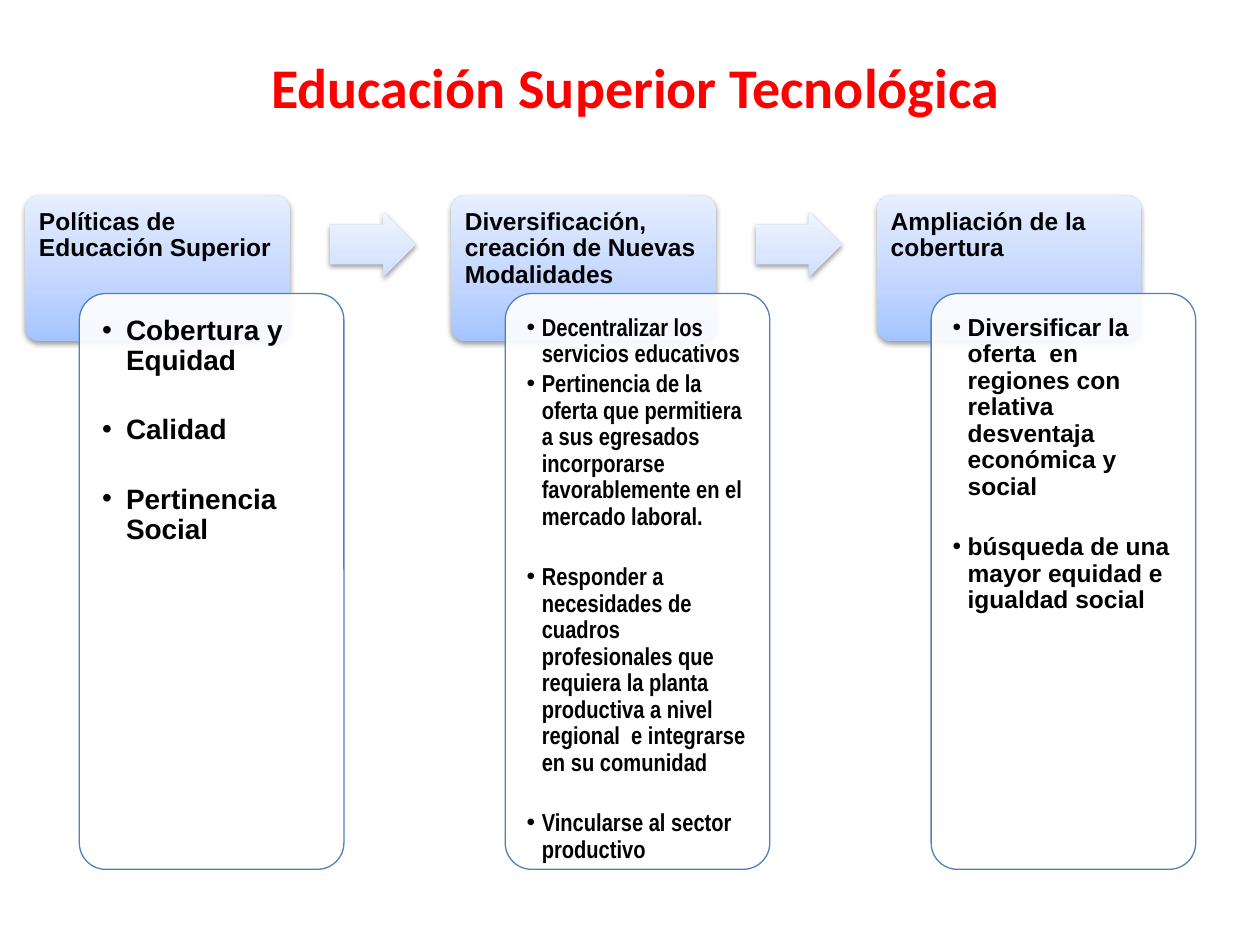
from dataclasses import dataclass

from lxml import etree
from pptx import Presentation
from pptx.dml.color import RGBColor
from pptx.enum import shapes, text
from pptx.oxml import ns
from pptx.util import Inches, Pt

RED = RGBColor(0xFF, 0x00, 0x00)
BLACK = RGBColor(0x00, 0x00, 0x00)
WHITE = RGBColor(0xFF, 0xFF, 0xFF)
BORDER = RGBColor(0x4F, 0x81, 0xBD)
HEADER_STOPS = (
    (0, RGBColor(0xA4, 0xC4, 0xFF)),
    (35, RGBColor(0xBF, 0xD4, 0xFF)),
    (100, RGBColor(0xE6, 0xEE, 0xFF)),
)
ARROW_STOPS = (
    (0, RGBColor(0xCD, 0xDD, 0xFE)),
    (35, RGBColor(0xDB, 0xE6, 0xFE)),
    (100, RGBColor(0xF0, 0xF5, 0xFF)),
)

FIRST_LEFT = 0.2
PITCH = 3.38
CARD_WIDTH = 2.1


@dataclass
class Item:
    wording: str
    space_before: float = 0


@dataclass
class Column:
    heading: str
    items: list[Item]
    font: str = "Arial"
    size: int = 14
    indent: float = 0.12
    inset: float = 0.11


COLUMNS = [
    Column(
        "Políticas de Educación Superior",
        [Item("Cobertura y Equidad"), Item("Calidad", 19.9), Item("Pertinencia Social", 19.9)],
        size=16,
        indent=0.19,
        inset=0.12,
    ),
    Column(
        "Diversificación, creación de Nuevas Modalidades",
        [
            Item("Decentralizar los servicios educativos"),
            Item(
                "Pertinencia de la oferta que permitiera a sus egresados incorporarse "
                "favorablemente en el mercado laboral."
            ),
            Item(
                "Responder a necesidades de cuadros  profesionales que requiera la planta "
                "productiva a nivel regional  e integrarse en su comunidad",
                17.4,
            ),
            Item("Vincularse al sector productivo", 17.4),
        ],
        font="Arial Narrow",
    ),
    Column(
        "Ampliación de la cobertura",
        [
            Item(
                "Diversificar la oferta  en  regiones con relativa desventaja "
                "económica y social"
            ),
            Item("búsqueda de una mayor equidad e igualdad social", 17.4),
        ],
    ),
]


def add_element(parent, tag: str, **attributes):
    element = etree.SubElement(parent, ns.qn(tag))
    for name, value in attributes.items():
        element.set(name, str(value))
    return element


def add_outline(slide, kind, left: float, top: float, width: float, height: float, adjustments):
    shape = slide.shapes.add_shape(kind, Inches(left), Inches(top), Inches(width), Inches(height))
    for index, value in enumerate(adjustments):
        shape.adjustments[index] = value
    shape.shadow.inherit = False
    return shape


def style_raised(shape, stops) -> None:
    shape.line.fill.background()
    shape.fill.gradient()
    properties = shape.element.spPr
    gradient = properties.find(ns.qn("a:gradFill"))
    for child in list(gradient):
        gradient.remove(child)
    stop_list = add_element(gradient, "a:gsLst")
    for position, color in stops:
        stop = add_element(stop_list, "a:gs", pos=position * 1000)
        add_element(stop, "a:srgbClr", val=color)
    add_element(gradient, "a:lin", ang=270 * 60000, scaled=0)
    shadow = add_element(
        properties.find(ns.qn("a:effectLst")),
        "a:outerShdw",
        blurRad=Pt(3.1),
        dist=Pt(1.6),
        dir=90 * 60000,
        rotWithShape=0,
    )
    add_element(add_element(shadow, "a:srgbClr", val=BLACK), "a:alpha", val=38000)


def style_panel(shape) -> None:
    shape.fill.solid()
    shape.fill.fore_color.rgb = WHITE
    color = shape.element.spPr.find(ns.qn("a:solidFill")).find(ns.qn("a:srgbClr"))
    add_element(color, "a:alpha", val=90000)
    shape.line.color.rgb = BORDER
    shape.line.width = Pt(0.75)


def add_frame(slide, left: float, top: float, width: float, height: float, inset: float, bottom: float):
    box = slide.shapes.add_textbox(Inches(left), Inches(top), Inches(width), Inches(height))
    frame = box.text_frame
    frame.word_wrap = True
    frame.vertical_anchor = text.MSO_ANCHOR.TOP
    frame.margin_left = frame.margin_top = frame.margin_right = Inches(inset)
    frame.margin_bottom = Inches(bottom)
    return frame


def add_run(paragraph, wording: str, font: str, size: float, color: RGBColor) -> None:
    run = paragraph.add_run()
    run.text = wording
    run.font.name = font
    run.font.size = Pt(size)
    run.font.bold = True
    run.font.color.rgb = color


def add_items(frame, column: Column) -> None:
    for index, item in enumerate(column.items):
        paragraph = frame.add_paragraph() if index else frame.paragraphs[0]
        paragraph.level = 1
        paragraph.line_spacing = 0.9
        paragraph.space_before = Pt(item.space_before)
        paragraph.space_after = Pt(column.size * 0.15)
        properties = paragraph._p.get_or_add_pPr()
        properties.set("marL", str(Inches(column.indent)))
        properties.set("indent", str(-Inches(column.indent)))
        add_element(properties, "a:buFont", typeface="Arial")
        add_element(properties, "a:buChar", char="•")
        add_run(paragraph, item.wording, column.font, column.size, BLACK)


def add_column(slide, column: Column, left: float) -> None:
    rounded = shapes.MSO_SHAPE.ROUNDED_RECTANGLE
    header = add_outline(slide, rounded, left, 1.55, CARD_WIDTH, 1.16, [0.1])
    style_raised(header, HEADER_STOPS)
    heading = add_frame(slide, left, 1.55, CARD_WIDTH, 0.78, 0.11, 0.06).paragraphs[0]
    heading.line_spacing = 0.9
    heading.space_after = Pt(14 * 0.35)
    add_run(heading, column.heading, "Arial", 14, BLACK)

    style_panel(add_outline(slide, rounded, left + 0.43, 2.33, CARD_WIDTH, 4.57, [0.1]))
    frame = add_frame(slide, left + 0.49, 2.39, 1.98, 4.44, column.inset, column.inset)
    add_items(frame, column)


def add_title(slide) -> None:
    title = slide.shapes.title
    title.left, title.top = Inches(0.59), Inches(0.3)
    title.width, title.height = Inches(8.91), Inches(0.77)
    title.text_frame.vertical_anchor = text.MSO_ANCHOR.MIDDLE
    paragraph = title.text_frame.paragraphs[0]
    paragraph.alignment = text.PP_ALIGN.CENTER
    add_run(paragraph, "Educación Superior Tecnológica", "Calibri", 32, RED)


def main() -> None:
    presentation = Presentation()
    presentation.slide_width, presentation.slide_height = Inches(10), Inches(7.5)
    slide = presentation.slides.add_slide(presentation.slide_layouts[5])
    add_title(slide)
    for index, column in enumerate(COLUMNS):
        left = FIRST_LEFT + index * PITCH
        add_column(slide, column, left)
        if index < len(COLUMNS) - 1:
            arrow = add_outline(
                slide, shapes.MSO_SHAPE.RIGHT_ARROW, left + 2.42, 1.68, 0.68, 0.52, [0.6, 0.5]
            )
            style_raised(arrow, ARROW_STOPS)
    presentation.save("out.pptx")


if __name__ == "__main__":
    main()
